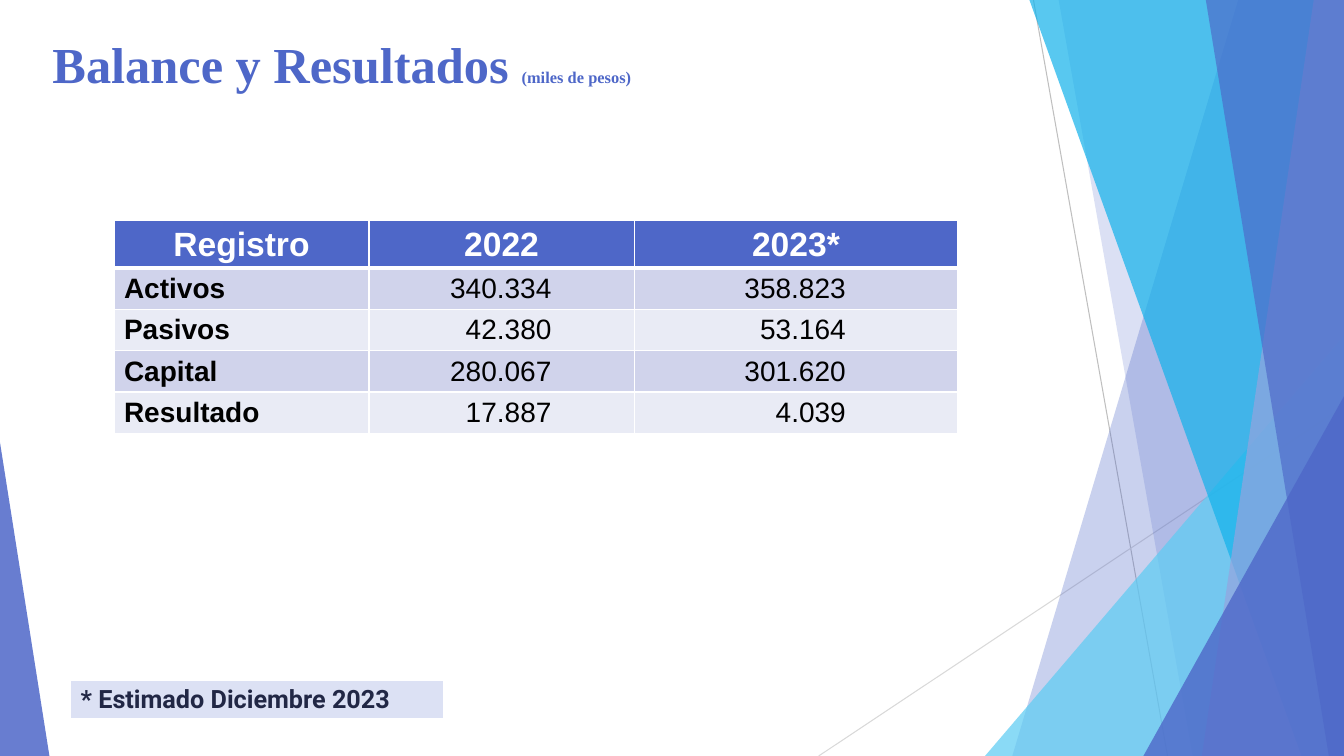
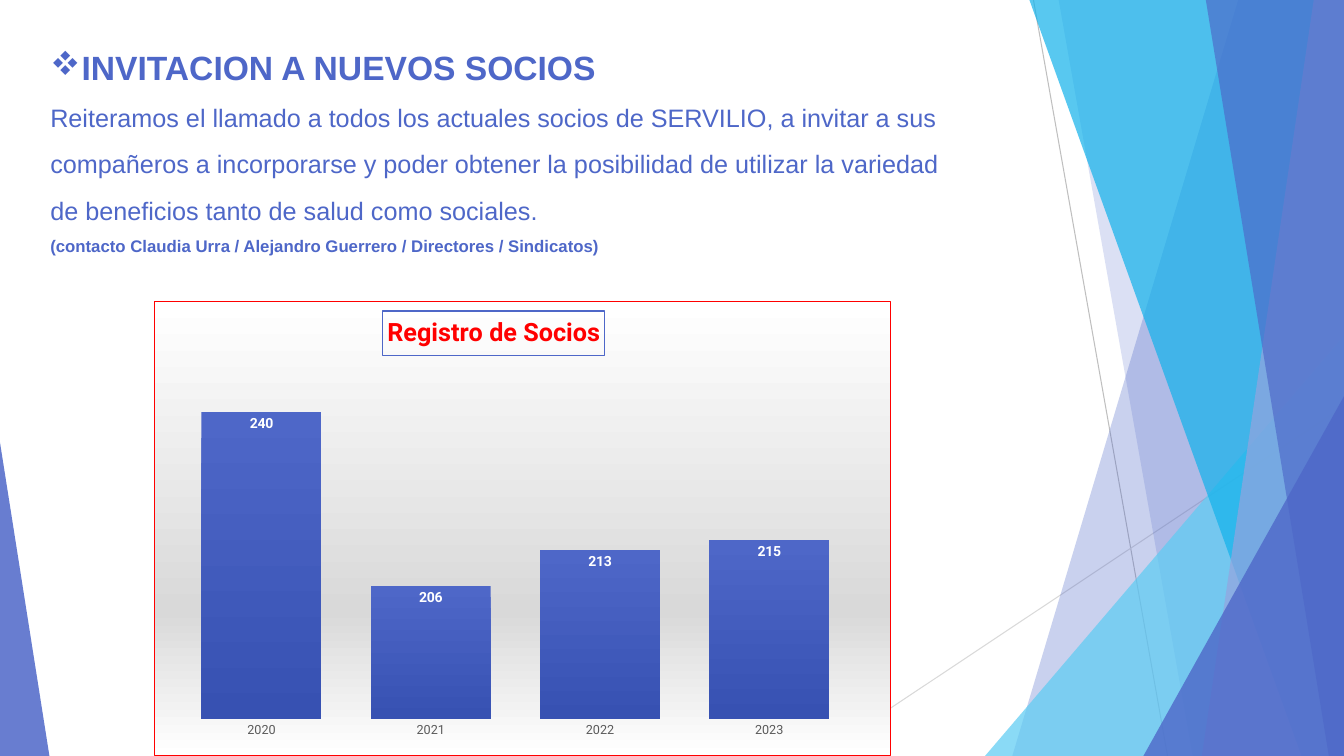
from dataclasses import dataclass

from lxml.etree import SubElement
from pptx import Presentation
from pptx.chart.data import CategoryChartData
from pptx.dml.color import RGBColor
from pptx.enum.chart import XL_CHART_TYPE as ChartType
from pptx.enum.chart import XL_LABEL_POSITION as LabelPosition
from pptx.enum.chart import XL_TICK_MARK as TickMark
from pptx.enum.shapes import MSO_CONNECTOR as Connector
from pptx.enum.shapes import MSO_SHAPE as Preset
from pptx.enum.text import MSO_ANCHOR as Anchor
from pptx.enum.text import MSO_AUTO_SIZE as AutoSize
from pptx.enum.text import PP_ALIGN as Align
from pptx.oxml.ns import qn
from pptx.util import Inches, Pt

WIDTH, HEIGHT = 13.33, 7.5


@dataclass(frozen=True)
class Theme:
    blue: str = "4E67C8"
    deep_blue: str = "3751B2"
    soft_blue: str = "95A4DE"
    sky: str = "5ECCF3"
    cyan: str = "12B2EB"
    navy: str = "212745"
    pale_blue: str = "DCE1F4"
    row_dark: str = "D0D3EB"
    row_light: str = "E9EBF5"
    white: str = "FFFFFF"
    black: str = "000000"
    gray: str = "D9D9D9"
    line_gray: str = "BFBFBF"
    axis_gray: str = "595959"
    red: str = "FF0000"
    sans: str = "Arial"
    serif: str = "Times New Roman"
    label: str = "Roboto"
    bullet: str = "Wingdings"
    title: float = 36
    heading: float = 24
    cell: float = 20
    body: float = 18
    small: float = 12
    unit: float = 11.7
    data_label: float = 10
    axis: float = 9


THEME = Theme()


# Shared helpers
def rgb(color):
    return RGBColor.from_string(color)


def add_xml(parent, tag, **attributes):
    child = SubElement(parent, qn(tag))
    for name, value in attributes.items():
        child.set(name, str(value))
    return child


def style_font(font, name, size, color, bold=False):
    font.name, font.size, font.bold = name, Pt(size), bold
    font.color.rgb = rgb(color)


def style_paragraph(paragraph, name, size, color, bold=False):
    for run in paragraph.runs:
        style_font(run.font, name, size, color, bold)


def place(shape, left, top, width, height):
    shape.left, shape.top = Inches(left), Inches(top)
    shape.width, shape.height = Inches(width), Inches(height)


def place_title(slide, box):
    title = slide.shapes.title
    place(title, *box)
    frame = title.text_frame
    frame.auto_size, frame.word_wrap = AutoSize.NONE, True
    frame.vertical_anchor = Anchor.TOP
    paragraph = frame.paragraphs[0]
    paragraph.alignment = Align.LEFT
    return paragraph


# Backdrop of the master
def add_thin_line(shapes, start, end, color):
    line = shapes.add_connector(Connector.STRAIGHT, *map(Inches, start + end))
    line.line.color.rgb = rgb(color)
    line.line.width = Pt(0.75)
    add_xml(line.element.spPr, "a:effectLst")


def add_right_band(shapes, top_x, bottom_x):
    """Full-height band from a slanted left side to the right slide edge."""
    corners = [(top_x, 0), (WIDTH, 0), (WIDTH, HEIGHT), (bottom_x, HEIGHT)]
    points = [(Inches(x), Inches(y)) for x, y in corners]
    builder = shapes.build_freeform(*points[0], scale=1.0)
    builder.add_line_segments(points[1:], close=True)
    return builder.convert_to_shape()


def add_corner(shapes, left, top, width, apex):
    """Right triangle that stands on the bottom edge of the slide."""
    box = map(Inches, (left, top, width, HEIGHT - top))
    triangle = shapes.add_shape(Preset.ISOSCELES_TRIANGLE, *box)
    triangle.adjustments[0] = apex
    return triangle


def paint_glass(shape, color, opacity):
    shape.shadow.inherit = False
    shape.fill.solid()
    shape.fill.fore_color.rgb = rgb(color)
    color_element = shape.element.spPr.find(".//" + qn("a:srgbClr"))
    add_xml(color_element, "a:alpha", val=opacity * 1000)
    shape.line.fill.background()


def add_backdrop(slide, master):
    """Draw the facets as one group and hand it to the master."""
    group = slide.shapes.add_group_shape()
    shapes = group.shapes
    add_thin_line(shapes, (10.25, 0), (11.58, HEIGHT), THEME.line_gray)
    add_thin_line(shapes, (WIDTH, 4.03), (8.12, HEIGHT), THEME.gray)
    facets = [
        (add_right_band, (12.28, 10.04), THEME.blue, 30),
        (add_right_band, (10.5, 11.83), THEME.blue, 20),
        (add_corner, (9.77, 3.33, 3.56, 1), THEME.sky, 72),
        (add_right_band, (10.21, 12.91), THEME.cyan, 70),
        (add_right_band, (13.03, 11.92), THEME.soft_blue, 70),
        (add_right_band, (11.96, 13.18), THEME.blue, 65),
        (add_corner, (11.34, 3.93, 1.99, 1), THEME.blue, 80),
        (add_corner, (0, 4.39, 0.49, 0), THEME.blue, 85),
    ]
    for add_facet, geometry, color, opacity in facets:
        paint_glass(add_facet(shapes, *geometry), color, opacity)
    for number, properties in enumerate(group.element.iter(qn("p:cNvPr")), 100):
        properties.set("id", str(number))
    master.shapes.element.append(group.element)


# Tables
def add_plain_table(slide, box, column_widths, row_heights):
    frame = slide.shapes.add_table(
        len(row_heights), len(column_widths), *map(Inches, box))
    table = frame.table
    for column, width in zip(table.columns, column_widths):
        column.width = Inches(width)
    for row, height in zip(table.rows, row_heights):
        row.height = Inches(height)
    return table


def fill_cell(cell, text, fill, font, align=Align.LEFT, top=1, bottom=1):
    cell.margin_top = cell.margin_bottom = Inches(0.04)
    cell.vertical_anchor = Anchor.MIDDLE
    properties = cell._tc.get_or_add_tcPr()
    for side, points in zip("LRTB", (1, 1, top, bottom)):
        border = add_xml(properties, f"a:ln{side}", w=Pt(points))
        add_xml(add_xml(border, "a:solidFill"), "a:srgbClr", val=THEME.white)
    cell.fill.solid()
    cell.fill.fore_color.rgb = rgb(fill)
    paragraph = cell.text_frame.paragraphs[0]
    paragraph.text = text
    paragraph.alignment = align
    style_paragraph(paragraph, *font)


def add_balance_table(slide, left, top):
    rows = [
        ("Registro", "2022", "2023*"),
        ("Activos", "340.334", "358.823"),
        ("Pasivos", "42.380", "53.164"),
        ("Capital", "280.067", "301.620"),
        ("Resultado", "17.887", "4.039"),
    ]
    widths = (2.53, 2.63, 3.21)
    heights = [0.47] + [0.41] * (len(rows) - 1)
    number_margins = (None, 0.82, 1.11)
    table = add_plain_table(
        slide, (left, top, sum(widths), sum(heights)), widths, heights)
    header_font = (THEME.sans, THEME.heading, THEME.white, True)
    for row_index, row in enumerate(rows):
        fill = THEME.row_dark if row_index % 2 else THEME.row_light
        for column_index, text in enumerate(row):
            cell = table.cell(row_index, column_index)
            if row_index == 0:
                fill_cell(cell, text, THEME.blue, header_font, Align.CENTER, bottom=3)
                continue
            is_name = column_index == 0
            font = (THEME.sans, THEME.cell, THEME.black, is_name)
            align = Align.LEFT if is_name else Align.RIGHT
            fill_cell(cell, text, fill, font, align, top=3 if row_index == 1 else 1)
            if not is_name:
                cell.margin_right = Inches(number_margins[column_index])


def add_footnote(slide, left, top, width, height):
    table = add_plain_table(slide, (left, top, width, height), [width], [height])
    fill_cell(table.cell(0, 0), "* Estimado Diciembre 2023", THEME.pale_blue,
              (THEME.label, THEME.body, THEME.navy, True), bottom=3)


# Member chart
def set_layout(parent, index, **values):
    for old in parent.findall(qn("c:layout")):
        parent.remove(old)
    layout = add_xml(parent, "c:layout")
    manual = add_xml(layout, "c:manualLayout")
    for tag, value in values.items():
        add_xml(manual, f"c:{tag}", val=value)
    parent.insert(index, layout)


def paint_chart_area(chart):
    chart_space = chart.element
    properties = add_xml(chart_space, "c:spPr")
    gradient = add_xml(properties, "a:gradFill")
    stops = add_xml(gradient, "a:gsLst")
    for percent, color in ((0, THEME.white), (68, THEME.gray), (100, THEME.white)):
        stop = add_xml(stops, "a:gs", pos=percent * 1000)
        add_xml(stop, "a:srgbClr", val=color)
    add_xml(gradient, "a:lin", ang=90 * 60000, scaled=0)
    border = add_xml(properties, "a:ln", w=Pt(0.75))
    add_xml(add_xml(border, "a:solidFill"), "a:srgbClr", val=THEME.red)
    chart_space.find(qn("c:chart")).addnext(properties)


def add_member_chart(slide, box):
    data = CategoryChartData()
    data.categories = ["2020", "2021", "2022", "2023"]
    data.add_series("Series 1", (240, 206, 213, 215))
    chart = slide.shapes.add_chart(
        ChartType.COLUMN_CLUSTERED, *map(Inches, box), data).chart
    chart.has_legend = False
    style_font(chart.font, THEME.label, THEME.data_label, THEME.black)
    paint_chart_area(chart)

    # Framed title
    title = chart.chart_title
    title.text_frame.text = "Registro de Socios"
    style_paragraph(title.text_frame.paragraphs[0],
                    THEME.label, THEME.body, THEME.red, True)
    title.format.line.color.rgb = rgb(THEME.blue)
    title.format.line.width = Pt(0.75)
    set_layout(title.element, 1, xMode="edge", yMode="edge", x=0.31, y=0.02)

    # Axes
    values = chart.value_axis
    values.minimum_scale, values.maximum_scale = 180, 250
    values.has_major_gridlines = False
    values.visible = False
    categories = chart.category_axis
    categories.major_tick_mark = TickMark.NONE
    categories.format.line.fill.background()
    style_font(categories.tick_labels.font, THEME.label, THEME.axis, THEME.axis_gray)

    # Columns and their values
    plot = chart.plots[0]
    plot.gap_width = 41
    plot.vary_by_categories = False
    series = plot.series[0]
    series.invert_if_negative = False
    fill = series.format.fill
    fill.gradient()
    fill.gradient_angle = 270
    for stop, color in zip(fill.gradient_stops, (THEME.blue, THEME.deep_blue)):
        stop.color.rgb = rgb(color)
    labels = series.data_labels
    labels.show_value = True
    labels.position = LabelPosition.INSIDE_END
    style_font(labels.font, THEME.label, THEME.data_label, THEME.white, True)
    set_layout(chart.element.find(".//" + qn("c:plotArea")), 0,
               layoutTarget="inner", xMode="edge", yMode="edge",
               x=0.03, y=0.13, w=0.92, h=0.79)


# Slides
def build_balance_slide(slide):
    paragraph = place_title(slide, (0.42, 0.28, 9.29, 0.72))
    for text, size in (("Balance y Resultados ", THEME.title),
                       ("(miles de pesos)", THEME.unit)):
        run = paragraph.add_run()
        run.text = text
        style_font(run.font, THEME.serif, size, THEME.blue, True)
    add_footnote(slide, 0.7, 6.75, 3.7, 0.39)
    add_balance_table(slide, 1.13, 2.19)


def build_invitation_slide(slide):
    # Bulleted heading
    heading = place_title(slide, (0.4, 0.14, 9.08, 0.7))
    heading.text = "INVITACION A NUEVOS SOCIOS"
    heading.line_spacing = 1.7
    style_paragraph(heading, THEME.sans, THEME.heading, THEME.blue, True)
    properties = heading._p.get_or_add_pPr()
    properties.set("marL", str(Inches(0.31)))
    properties.set("indent", str(Inches(-0.31)))
    add_xml(properties, "a:buFont", typeface=THEME.bullet, charset=2)
    add_xml(properties, "a:buChar", char="v")

    # Call and contact
    text_box = slide.shapes.add_textbox(*map(Inches, (0.4, 0.81, 9.08, 1.83)))
    frame = text_box.text_frame
    frame.word_wrap = True
    call = frame.paragraphs[0]
    call.text = (
        "Reiteramos el llamado a todos los actuales socios de SERVILIO, a invitar "
        "a sus compañeros a incorporarse y poder obtener la posibilidad de utilizar "
        "la variedad de beneficios tanto de salud como sociales.")
    call.line_spacing = 1.53
    style_paragraph(call, THEME.sans, THEME.body, THEME.blue)
    contact = frame.add_paragraph()
    contact.text = ("(contacto Claudia Urra / Alejandro Guerrero / "
                    "Directores / Sindicatos)")
    contact.line_spacing = 1.5
    style_paragraph(contact, THEME.sans, THEME.small, THEME.blue, True)

    add_member_chart(slide, (1.53, 2.99, 7.31, 4.51))


def main():
    presentation = Presentation()
    presentation.slide_width = Inches(WIDTH)
    presentation.slide_height = Inches(HEIGHT)
    title_only = presentation.slide_layouts.get_by_name("Title Only")
    slides = [presentation.slides.add_slide(title_only) for _ in range(2)]
    add_backdrop(slides[0], presentation.slide_master)
    build_balance_slide(slides[0])
    build_invitation_slide(slides[1])
    presentation.save("out.pptx")


if __name__ == "__main__":
    main()
